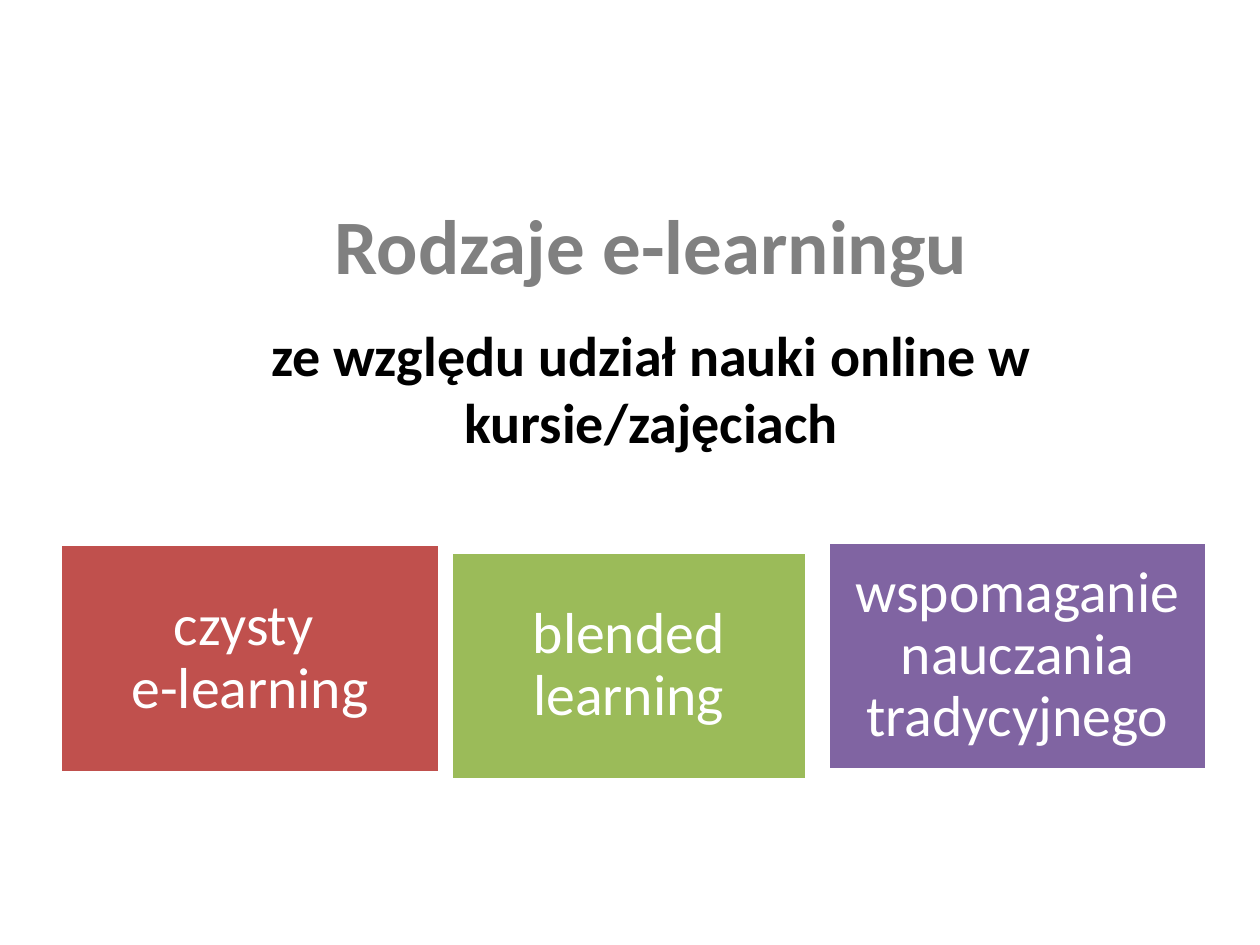
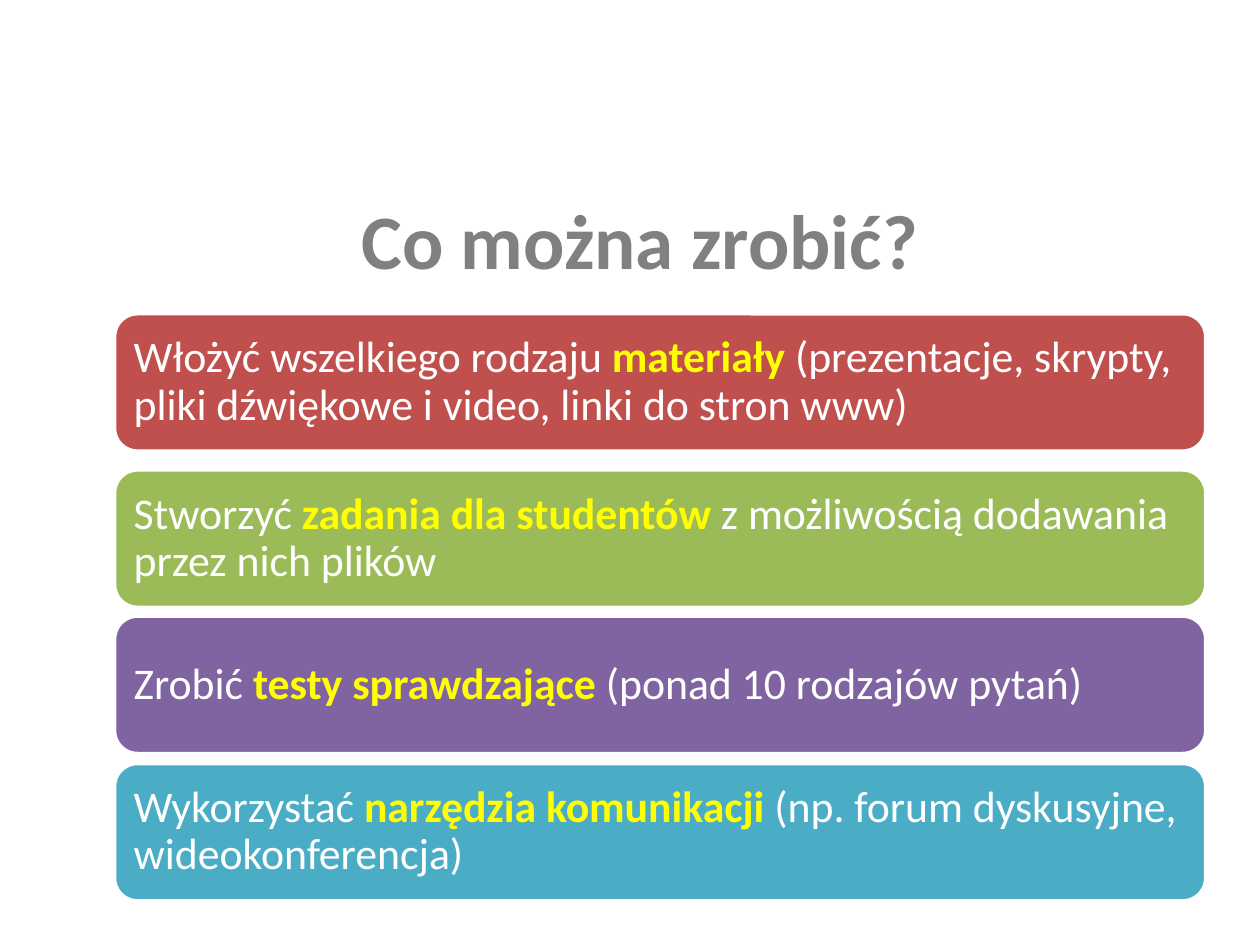
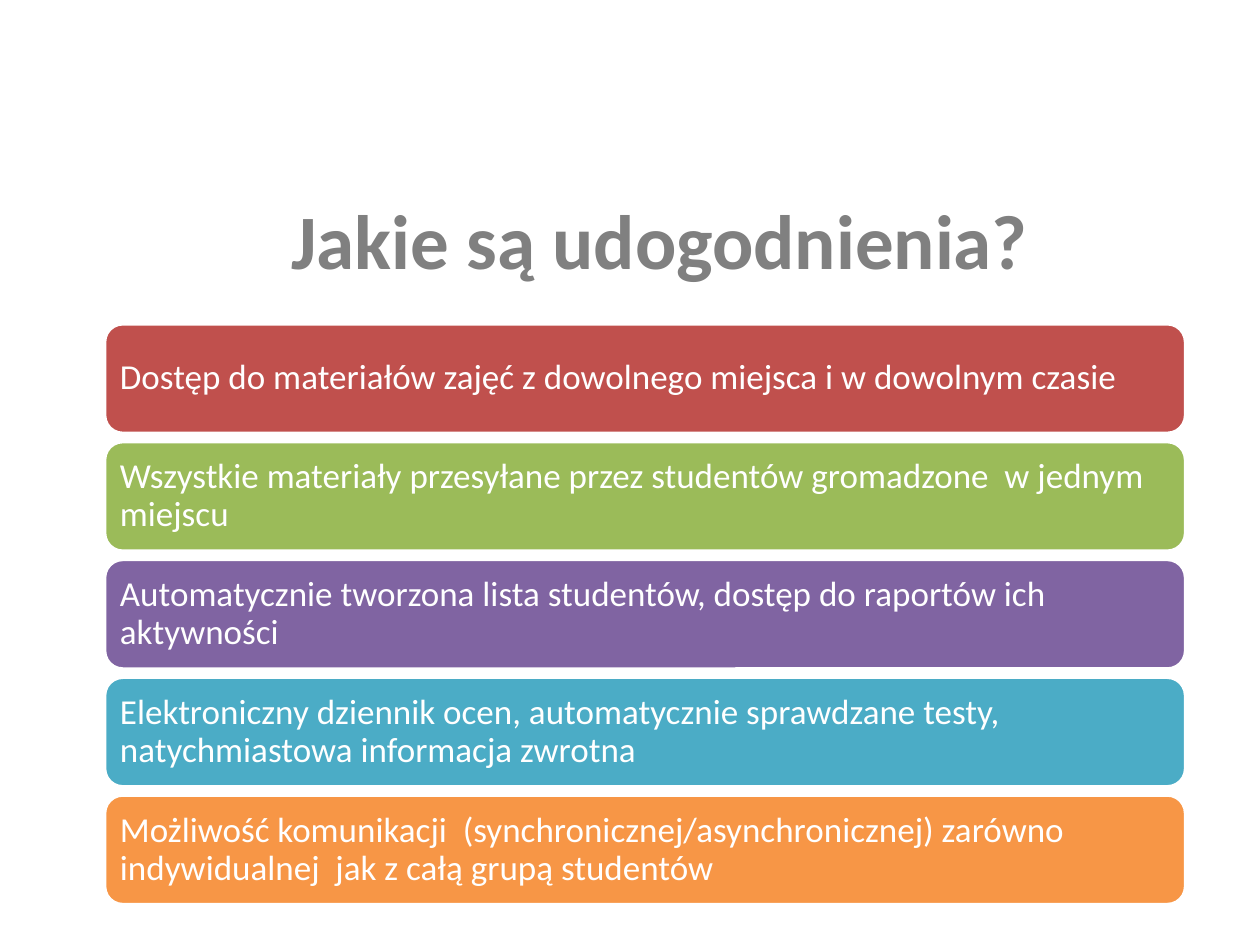
from dataclasses import dataclass

from lxml import etree
from pptx import Presentation
from pptx.dml.color import RGBColor as RGB
from pptx.enum.shapes import MSO_SHAPE as SHAPE
from pptx.enum.text import MSO_ANCHOR as ANCHOR, MSO_AUTO_SIZE as AUTO, PP_ALIGN as ALIGN
from pptx.oxml.ns import qn
from pptx.util import Inches, Pt


@dataclass(frozen=True)
class Theme:
    font: str = "Calibri"
    title: str = "808080"
    text: str = "000000"
    light: str = "FFFFFF"
    strong: str = "FFFF00"
    accents: tuple = ("C0504D", "9BBB59", "8064A2", "4BACC6", "F79646")
    title_size: int = 44
    subtitle_size: int = 32
    card_size: int = 33
    action_size: int = 25
    benefit_size: int = 20
    line: int = 2


T = Theme()
TITLE_AND_BODY, TITLE_ONLY = 1, 5

SUBTITLE = "ze względu udział nauki online w kursie/zajęciach"
CARDS = [
    ("czysty \ve-learning", (0.48, 4.32, 3.01, 1.81)),
    ("blended learning", (3.58, 4.38, 2.82, 1.81)),
    ("wspomaganie nauczania tradycyjnego", (6.57, 4.3, 3.01, 1.81)),
]
ACTIONS = [
    (2.49, ("Włożyć wszelkiego rodzaju ", "materiały ",
            "(prezentacje, skrypty, pliki dźwiękowe i video, linki do stron www)")),
    (3.73, ("Stworzyć ", "zadania dla studentów ", "z możliwością dodawania przez nich plików")),
    (4.89, ("Zrobić ", "testy sprawdzające ", "(ponad 10 rodzajów pytań)")),
    (6.06, ("Wykorzystać ", "narzędzia komunikacji ", "(np. forum dyskusyjne, wideokonferencja)")),
]
BENEFITS = [
    "Dostęp do materiałów zajęć z dowolnego miejsca i w dowolnym czasie",
    "Wszystkie materiały przesyłane przez studentów gromadzone  w jednym miejscu",
    "Automatycznie tworzona lista studentów, dostęp do raportów ich aktywności",
    "Elektroniczny dziennik ocen, automatycznie sprawdzane testy, natychmiastowa informacja zwrotna",
    "Możliwość komunikacji  (synchronicznej/asynchronicznej) zarówno indywidualnej  jak z całą grupą studentów",
]
BENEFIT_FIRST, BENEFIT_LAST = 2.57, 6.31


def style(font, size, color, bold=False):
    font.name = T.font
    font.size = Pt(size)
    font.bold = bold
    font.color.rgb = RGB.from_string(color)


def fill_placeholder(sp, text, box, size, color, anchor):
    sp.left, sp.top, sp.width, sp.height = map(Inches, box)
    tf = sp.text_frame
    tf.text = text
    tf.auto_size = AUTO.NONE
    tf.vertical_anchor = anchor
    p = tf.paragraphs[0]
    p.alignment = ALIGN.CENTER
    p.space_before = Pt(0)
    style(p.runs[0].font, size, color, True)
    return p


def add_titled_slide(prs, layout, title, box):
    s = prs.slides.add_slide(prs.slide_layouts[layout])
    fill_placeholder(s.shapes.title, title, box, T.title_size, T.title, ANCHOR.MIDDLE)
    return s


def add_block(s, kind, box, color, parts, size, inset, align):
    sp = s.shapes.add_shape(kind, *map(Inches, box))
    sp.shadow.inherit = False
    sp.fill.solid()
    sp.fill.fore_color.rgb = RGB.from_string(color)
    sp.line.color.rgb = RGB.from_string(T.light)
    sp.line.width = Pt(T.line)
    tf = sp.text_frame
    tf.word_wrap = True
    tf.vertical_anchor = ANCHOR.MIDDLE
    tf.margin_left = tf.margin_right = tf.margin_top = tf.margin_bottom = Inches(inset)
    p = tf.paragraphs[0]
    p.alignment = align
    p.line_spacing = 0.9
    if len(parts) == 1:
        p.text = parts[0]
    else:
        for part in parts:
            p.add_run().text = part
    for i, r in enumerate(p.runs):
        strong = len(parts) > 1 and i == 1
        style(r.font, size, T.strong if strong else T.light, strong)


def add_types(prs):
    s = add_titled_slide(prs, TITLE_AND_BODY, "Rodzaje e-learningu", (0.67, 1.31, 9, 1.25))
    p = fill_placeholder(s.placeholders[1], SUBTITLE, (0.67, 2.49, 9, 1.37),
                         T.subtitle_size, T.text, ANCHOR.TOP)
    pPr = p._p.get_or_add_pPr()
    pPr.set("marL", "0")
    pPr.set("indent", "0")
    etree.SubElement(pPr, qn("a:buNone"))
    for color, (text, box) in zip(T.accents, CARDS):
        add_block(s, SHAPE.RECTANGLE, box, color, (text,), T.card_size, 0.14, ALIGN.CENTER)


def add_actions(prs):
    s = add_titled_slide(prs, TITLE_ONLY, "Co można zrobić?", (0.75, 1.39, 8.66, 1.01))
    for color, (top, parts) in zip(T.accents, ACTIONS):
        add_block(s, SHAPE.ROUNDED_RECTANGLE, (0.91, top, 8.66, 1.09), color, parts,
                  T.action_size, 0.1, ALIGN.LEFT)


def add_benefits(prs):
    s = add_titled_slide(prs, TITLE_ONLY, "Jakie są udogodnienia?", (0.91, 1.39, 8.66, 1.01))
    pitch = (BENEFIT_LAST - BENEFIT_FIRST) / (len(BENEFITS) - 1)
    for i, (color, text) in enumerate(zip(T.accents, BENEFITS)):
        add_block(s, SHAPE.ROUNDED_RECTANGLE, (0.83, BENEFIT_FIRST + i * pitch, 8.58, 0.87),
                  color, (text,), T.benefit_size, 0.08, ALIGN.LEFT)


def main():
    prs = Presentation()
    prs.slide_width, prs.slide_height = Inches(10), Inches(7.5)
    add_types(prs)
    add_actions(prs)
    add_benefits(prs)
    prs.save("out.pptx")


if __name__ == "__main__":
    main()
